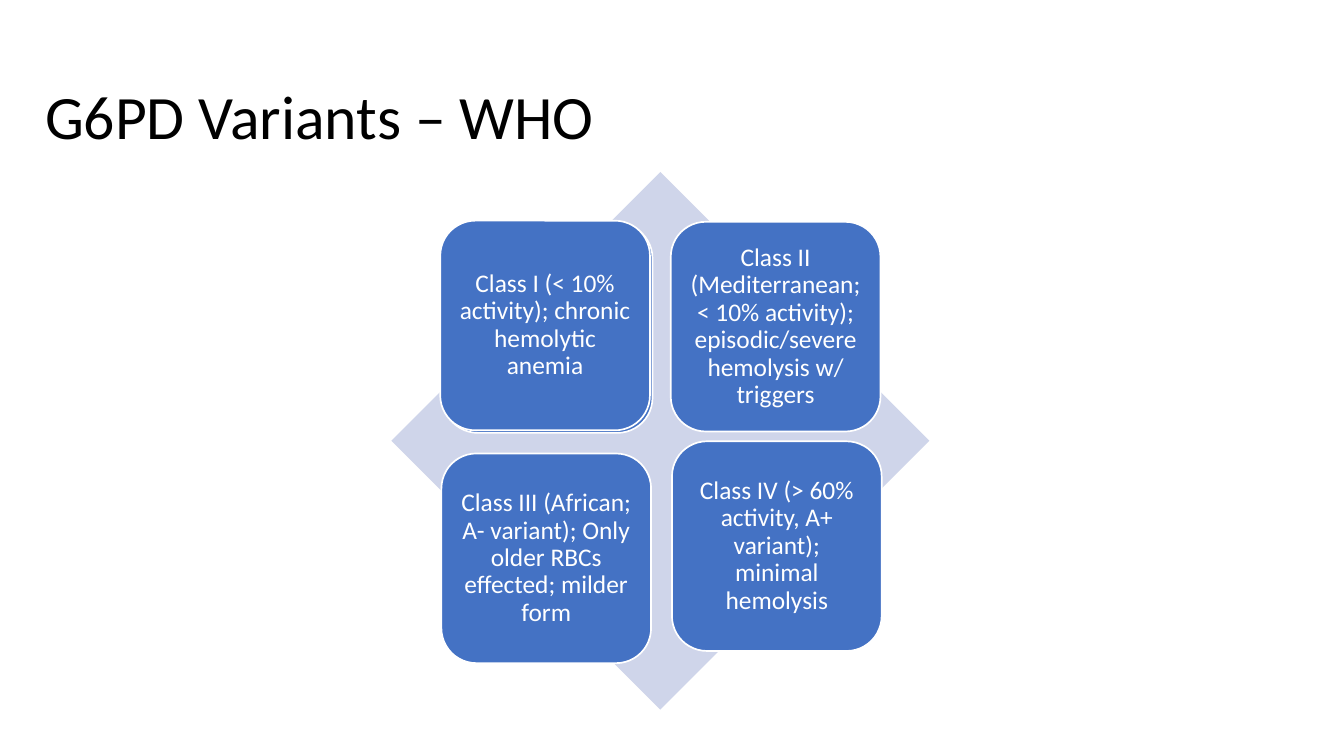
from dataclasses import dataclass

from pptx import Presentation
from pptx.dml.color import RGBColor
from pptx.enum.shapes import MSO_SHAPE
from pptx.enum.text import MSO_ANCHOR, PP_ALIGN
from pptx.shapes.autoshape import Shape
from pptx.slide import Slide
from pptx.util import Pt

COLORS = {"black": "000000", "white": "FFFFFF", "blue": "4472C4", "pale": "CFD5EA"}
CARD_SIZE = 123.8
CARD_INSET = 4.3


@dataclass
class ClassCard:
    left: float
    top: float
    text: str = ""


CARDS = [
    ClassCard(261.4, 131.8),  # plain card behind Class I
    ClassCard(259.9, 130.3, "Class I (< 10% activity); chronic hemolytic anemia"),
    ClassCard(396, 131, "Class II (Mediterranean; < 10% activity); "
                        "episodic/severe hemolysis w/ triggers"),
    ClassCard(260.6, 267.8, "Class III (African; A- variant); "
                            "Only older RBCs effected; milder form"),
    ClassCard(396.7, 260.6, "Class IV (> 60% activity, A+ variant); minimal hemolysis"),
]


def color(name: str) -> RGBColor:
    return RGBColor.from_string(COLORS[name])


def write_text(shape: Shape, text: str, size: float, color_name: str,
               alignment: PP_ALIGN, inset: float) -> None:
    frame = shape.text_frame
    frame_format = {"word_wrap": True, "vertical_anchor": MSO_ANCHOR.MIDDLE}
    for side in ("left", "top", "right", "bottom"):
        frame_format[f"margin_{side}"] = Pt(inset)
    for name, value in frame_format.items():
        setattr(frame, name, value)
    paragraph = frame.paragraphs[0]
    paragraph.text = text
    for name, value in {"alignment": alignment, "line_spacing": 0.9}.items():
        setattr(paragraph, name, value)
    for name, value in {"name": "Calibri", "size": Pt(size)}.items():
        setattr(paragraph.font, name, value)
    paragraph.font.color.rgb = color(color_name)


def add_square(slide: Slide, kind: MSO_SHAPE, left: float, top: float,
               size: float, fill: str) -> Shape:
    shape = slide.shapes.add_shape(kind, Pt(left), Pt(top), Pt(size), Pt(size))
    shape.shadow.inherit = False
    shape.fill.solid()
    shape.fill.fore_color.rgb = color(fill)
    shape.line.fill.background()
    return shape


def add_card(slide: Slide, card: ClassCard) -> None:
    shape = add_square(slide, MSO_SHAPE.ROUNDED_RECTANGLE, card.left, card.top,
                       CARD_SIZE, "blue")
    shape.line.color.rgb = color("white")
    shape.line.width = Pt(1)
    if card.text:
        write_text(shape, card.text, 15, "white", PP_ALIGN.CENTER, CARD_INSET)


def main() -> None:
    presentation = Presentation()
    presentation.slide_width = Pt(793.44)
    presentation.slide_height = Pt(446.4)
    slide = presentation.slides.add_slide(presentation.slide_layouts[6])

    # Title
    title = slide.shapes.add_textbox(Pt(26.6), Pt(33.1), Pt(714.2), Pt(74.9))
    write_text(title, "G6PD Variants – WHO", 36.4, "black", PP_ALIGN.LEFT, 0)

    # Diamond with the class cards on it
    add_square(slide, MSO_SHAPE.DIAMOND, 231.1, 101.5, 317.5, "pale")
    for card in CARDS:
        add_card(slide, card)

    presentation.save("out.pptx")


if __name__ == "__main__":
    main()
